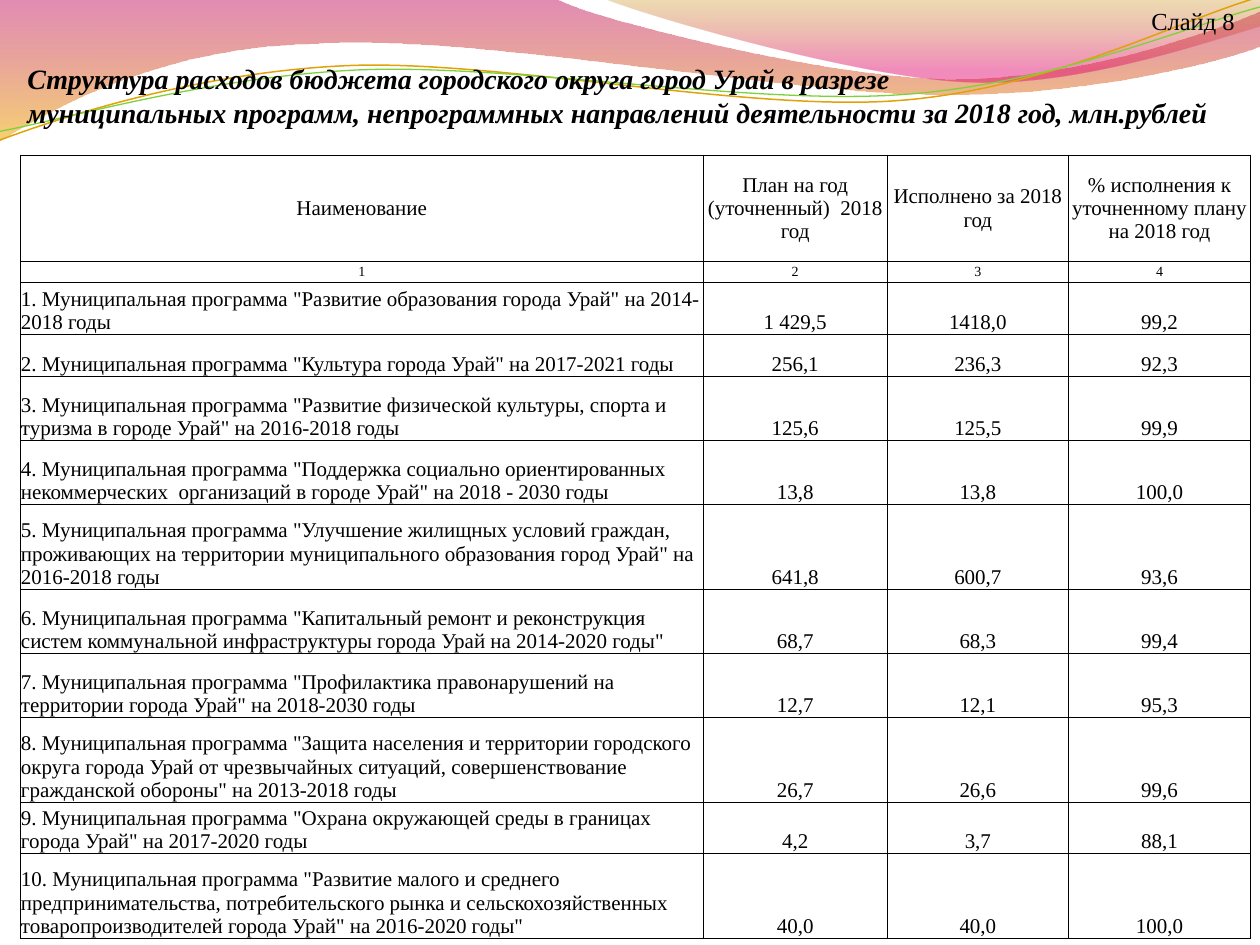
"""Build the slide with the 2018 municipal programme spending table."""
from dataclasses import dataclass

from lxml import etree
from pptx import Presentation
from pptx.dml.color import RGBColor
from pptx.enum.text import MSO_ANCHOR, MSO_AUTO_SIZE, PP_ALIGN
from pptx.oxml.ns import qn
from pptx.util import Pt

LEFT, CENTER = PP_ALIGN.LEFT, PP_ALIGN.CENTER
TOP, MIDDLE, BOTTOM = MSO_ANCHOR.TOP, MSO_ANCHOR.MIDDLE, MSO_ANCHOR.BOTTOM
NO_FIT = MSO_AUTO_SIZE.NONE
FONT = "Times New Roman"
BLACK = "000000"


@dataclass
class Stop:
    position: float
    color: str
    opacity: int


@dataclass
class Wave:
    start: tuple
    segments: list
    stops: tuple = ()
    line: str = ""
    width: float = 0


@dataclass
class Row:
    height: float
    values: tuple
    size: float = 12
    heading: bool = False


WAVES = [
    Wave((-1, -1),
         [(317, -1), (343, 12, 478, 45, 546, 45), (614, 45, 690, 19, 720, 6.5),
          (721, 26), (708, 32, 626, 55, 537, 54), (448, 54, 275, 20, 185, 24.5),
          (93, 26, 33, 60, -1, 81)],
         stops=(Stop(0, "BD0059", 45), Stop(1, "F0AB00", 55))),
    Wave((345, -1),
         [(366, 8, 491, 45, 554, 47), (616, 50, 692, 23, 720, 15), (720, 0)],
         stops=(Stop(0, "C38B00", 30), Stop(0.8, "E1006B", 45))),
    Wave((0, 80),
         [(35, 67, 114, 41, 199, 37.5), (284, 34, 427, 64, 513, 57.5),
          (600, 51, 675, 11, 719, -1.5)],
         line="E0A209", width=0.85),
    Wave((0, 75),
         [(34, 69, 118, 44, 204, 40), (290, 36, 430, 60.5, 516, 54),
          (602, 48, 678, 15, 720, 4)],
         line="7FD13B", width=0.75),
]

COLUMNS = [390.3, 105.1, 103.7, 103.9]
ROWS = [
    Row(60.6, ("Наименование", "План на год (уточненный)  2018 год", "Исполнено за 2018 год",
               "% исполнения к уточненному плану на 2018 год"), heading=True),
    Row(12, ("1", "2", "3", "4"), size=8, heading=True),
    Row(29.7, ('1. Муниципальная программа "Развитие образования города Урай" на 2014-2018 годы',
               "1 429,5", "1418,0", "99,2")),
    Row(24, ('2. Муниципальная программа "Культура города Урай" на 2017-2021 годы',
             "256,1", "236,3", "92,3")),
    Row(36.6, ('3. Муниципальная программа "Развитие физической культуры, спорта и туризма '
               'в городе Урай" на 2016-2018 годы', "125,6", "125,5", "99,9")),
    Row(36.6, ('4. Муниципальная программа "Поддержка социально ориентированных некоммерческих  '
               'организаций в городе Урай" на 2018 - 2030 годы', "13,8", "13,8", "100,0")),
    Row(48.6, ('5. Муниципальная программа "Улучшение жилищных условий граждан, проживающих на '
               'территории муниципального образования город Урай" на 2016-2018 годы',
               "641,8", "600,7", "93,6")),
    Row(36.6, ('6. Муниципальная программа "Капитальный ремонт и реконструкция систем '
               'коммунальной инфраструктуры города Урай на 2014-2020 годы"',
               "68,7", "68,3", "99,4")),
    Row(36.6, ('7. Муниципальная программа "Профилактика правонарушений на территории '
               'города Урай" на 2018-2030 годы', "12,7", "12,1", "95,3")),
    Row(48.6, ('8. Муниципальная программа "Защита населения и территории городского округа '
               'города Урай от чрезвычайных ситуаций, совершенствование гражданской обороны" '
               'на 2013-2018 годы', "26,7", "26,6", "99,6")),
    Row(29.1, ('9. Муниципальная программа "Охрана окружающей среды в границах города Урай" '
               'на 2017-2020 годы', "4,2", "3,7", "88,1")),
    Row(48.6, ('10. Муниципальная программа "Развитие малого и среднего предпринимательства, '
               'потребительского рынка и сельскохозяйственных товаропроизводителей города Урай" '
               'на 2016-2020 годы"', "40,0", "40,0", "100,0")),
]
TITLE = ("Структура расходов бюджета городского округа город Урай в разрезе\n"
         "муниципальных программ, непрограммных направлений деятельности за 2018 год, млн.рублей")


def rgb(color: str) -> RGBColor:
    return RGBColor.from_string(color)


def write(tf, text: str, size: float, align, bold: bool = False, italic: bool = False) -> None:
    tf.text = text
    for p in tf.paragraphs:
        p.alignment = align
        for r in p.runs:
            r.font.name, r.font.size = FONT, Pt(size)
            r.font.bold, r.font.italic = bold, italic
            r.font.color.rgb = rgb(BLACK)


def bend(sp, segments: list) -> None:
    """Turn each run of three line steps that stands for a curve into one Bezier step."""
    steps = iter(list(sp._element.iter(qn("a:lnTo"))))
    for seg in segments:
        group = [next(steps) for _ in range(len(seg) // 2)]
        if len(group) == 3:
            curve = etree.Element(qn("a:cubicBezTo"))
            group[0].addprevious(curve)
            for step in group:
                curve.append(step[0])
                step.getparent().remove(step)


def draw_wave(shapes, wave: Wave) -> None:
    builder = shapes.build_freeform(*map(Pt, wave.start))
    points = [(Pt(x), Pt(y)) for seg in wave.segments for x, y in zip(seg[::2], seg[1::2])]
    builder.add_line_segments(points, close=bool(wave.stops))
    sp = builder.convert_to_shape()
    bend(sp, wave.segments)
    sp.shadow.inherit = False
    if not wave.stops:
        sp.fill.background()
        sp.line.color.rgb = rgb(wave.line)
        sp.line.width = Pt(wave.width)
        return
    sp.line.fill.background()
    sp.fill.gradient()
    sp.fill.gradient_angle = 270
    for target, stop in zip(sp.fill.gradient_stops, wave.stops):
        target.position = stop.position
        target.color.rgb = rgb(stop.color)
    for clr, stop in zip(sp._element.spPr.iter(qn("a:srgbClr")), wave.stops):
        etree.SubElement(clr, qn("a:alpha"), val=str(stop.opacity * 1000))


def set_borders(cell) -> None:
    tc_pr = cell._tc.get_or_add_tcPr()
    for i, side in enumerate(("lnL", "lnR", "lnT", "lnB")):
        ln = etree.Element(qn(f"a:{side}"), w=str(Pt(0.5)))
        fill = etree.SubElement(ln, qn("a:solidFill"))
        etree.SubElement(fill, qn("a:srgbClr"), val=BLACK)
        tc_pr.insert(i, ln)


def draw_table(shapes, left: float, top: float) -> None:
    height = sum(row.height for row in ROWS)
    table = shapes.add_table(len(ROWS), len(COLUMNS), Pt(left), Pt(top),
                             Pt(sum(COLUMNS)), Pt(height)).table
    table.first_row = table.horz_banding = False
    for col, width in zip(table.columns, COLUMNS):
        col.width = Pt(width)
    for i, row in enumerate(ROWS):
        table.rows[i].height = Pt(row.height)
        for j, value in enumerate(row.values):
            cell = table.cell(i, j)
            cell.fill.background()
            cell.margin_left = cell.margin_right = cell.margin_top = Pt(0.4)
            cell.margin_bottom = Pt(0)
            cell.vertical_anchor = MIDDLE if row.heading else BOTTOM
            write(cell.text_frame, value, row.size, CENTER if row.heading or j else LEFT)
            set_borders(cell)


def main() -> None:
    prs = Presentation()
    prs.slide_width, prs.slide_height = Pt(720), Pt(540)
    s = prs.slides.add_slide(prs.slide_layouts[5])
    for wave in WAVES:
        draw_wave(s.shapes, wave)
    draw_table(s.shapes, 11.6, 88.6)

    title = s.shapes.title
    title.left, title.top, title.width, title.height = Pt(8.4), Pt(31.6), Pt(692), Pt(46)
    tf = title.text_frame
    tf.auto_size, tf.vertical_anchor, tf.word_wrap = NO_FIT, TOP, True
    write(tf, TITLE, 16, LEFT, bold=True, italic=True)
    s.shapes._spTree.append(title._element)

    label = s.shapes.add_textbox(Pt(650.5), Pt(0), Pt(62.6), Pt(24.5))
    label.text_frame.word_wrap = False
    write(label.text_frame, "Слайд 8", 14, CENTER)
    prs.save("out.pptx")


if __name__ == "__main__":
    main()
